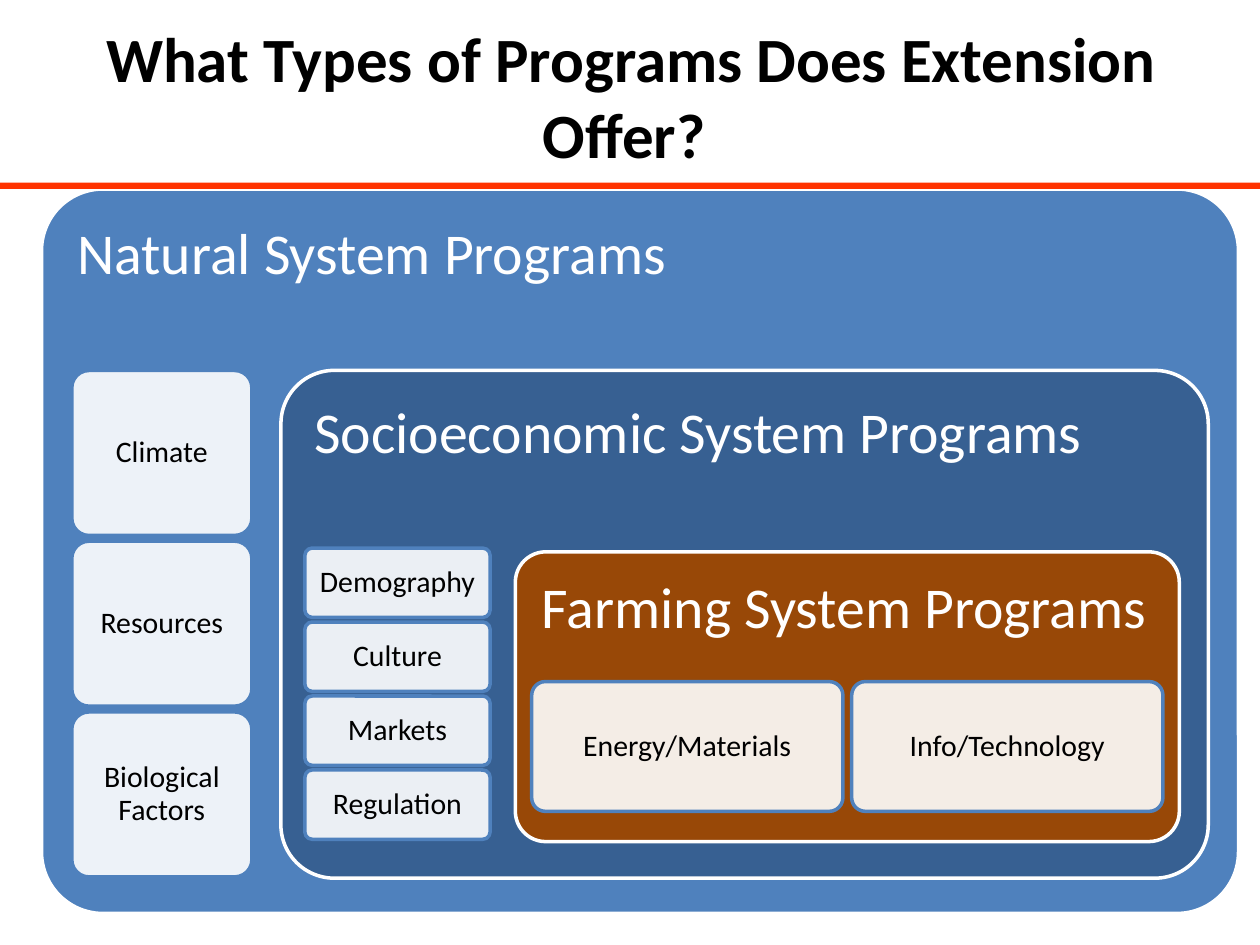
import pptx
import pptx.util
import pptx.dml.color
import pptx.enum.shapes
import pptx.enum.text
import pptx.oxml
from pptx.util import Inches

WHITE, BLACK, BLUE = "FFFFFF", "000000", "4F81BD"
ANCHOR = pptx.enum.text.MSO_ANCHOR
ALIGN = pptx.enum.text.PP_ALIGN
SHAPE = pptx.enum.shapes.MSO_SHAPE


def set_color(color_format, hex_color):
    color_format.rgb = pptx.dml.color.RGBColor.from_string(hex_color)


def fill_solid(shape, hex_color, opacity=100):
    shape.fill.solid()
    set_color(shape.fill.fore_color, hex_color)
    if opacity < 100:
        color = shape.fill._xPr.find(".//" + pptx.oxml.ns.qn("a:srgbClr"))
        alpha = color.makeelement(pptx.oxml.ns.qn("a:alpha"), {"val": str(opacity * 1000)})
        color.append(alpha)


def write(shape, text, size, hex_color, align, anchor, inset, bold=False, spacing=None):
    frame = shape.text_frame
    frame.word_wrap = True
    frame.vertical_anchor = anchor
    frame.margin_left = frame.margin_right = Inches(inset)
    frame.margin_top = frame.margin_bottom = Inches(inset)
    paragraph = frame.paragraphs[0]
    paragraph.alignment = align
    paragraph.line_spacing = spacing
    run = paragraph.add_run()
    run.text = text
    run.font.name = "Calibri"
    run.font.size = pptx.util.Pt(size)
    run.font.bold = bold
    set_color(run.font.color, hex_color)


def add_rounded(slide, box, corner, fill, outline, opacity=100):
    shape = slide.shapes.add_shape(SHAPE.ROUNDED_RECTANGLE, *map(Inches, box))
    shape.shadow.inherit = False
    shape.adjustments[0] = corner
    fill_solid(shape, fill, opacity)
    set_color(shape.line.color, outline)
    shape.line.width = pptx.util.Pt(2)
    return shape


def add_system(slide, heading, box, fill, corner=0.105):
    """Large panel with its heading at the top left."""
    panel = add_rounded(slide, box, corner, fill, WHITE)
    write(panel, heading, 33, WHITE, ALIGN.LEFT, ANCHOR.TOP, 0.14, spacing=0.9)


def add_topics(slide, topics, first_box, step_x=0, step_y=0):
    """Row or column of equal translucent topic boxes."""
    left, top, width, height = first_box
    for i, topic in enumerate(topics):
        box = (left + i * step_x, top + i * step_y, width, height)
        card = add_rounded(slide, box, 0.105, WHITE, BLUE, opacity=90)
        write(card, topic, 17, BLACK, ALIGN.CENTER, ANCHOR.MIDDLE, 0.07, spacing=0.9)


def add_title(slide, title):
    box = slide.shapes.add_textbox(Inches(0.25), Inches(0.17), Inches(9.52), Inches(1.17))
    write(box, title, 36, BLACK, ALIGN.CENTER, ANCHOR.MIDDLE, 0.05, bold=True)


def add_title_rule(slide):
    rule = slide.shapes.add_shape(
        SHAPE.RECTANGLE, 0, Inches(1.45), Inches(10), Inches(0.05))
    rule.shadow.inherit = False
    fill_solid(rule, "FF3300")
    rule.line.fill.background()


def main():
    deck = pptx.Presentation()
    deck.slide_width, deck.slide_height = Inches(10), Inches(7.5)
    slide = deck.slides.add_slide(deck.slide_layouts[6])

    add_title(slide, "What Types of Programs Does Extension Offer? ")

    add_system(slide, "Natural System Programs", (0.33, 1.5, 9.5, 5.75), BLUE, corner=0.085)
    add_topics(slide, ["Climate", "Resources", "Biological Factors"],
               (0.57, 2.94, 1.43, 1.31), step_y=1.355)

    add_system(slide, "Socioeconomic System Programs", (2.23, 2.94, 7.36, 4.03), "376092")
    add_topics(slide, ["Demography", "Culture", "Markets", "Regulation"],
               (2.42, 4.35, 1.47, 0.55), step_y=0.587)

    add_system(slide, "Farming System Programs", (4.09, 4.38, 5.27, 2.3), "984807")
    add_topics(slide, ["Energy/Materials", "Info/Technology"],
               (4.22, 5.41, 2.47, 1.03), step_x=2.54)

    add_title_rule(slide)
    deck.save("out.pptx")


if __name__ == "__main__":
    main()
